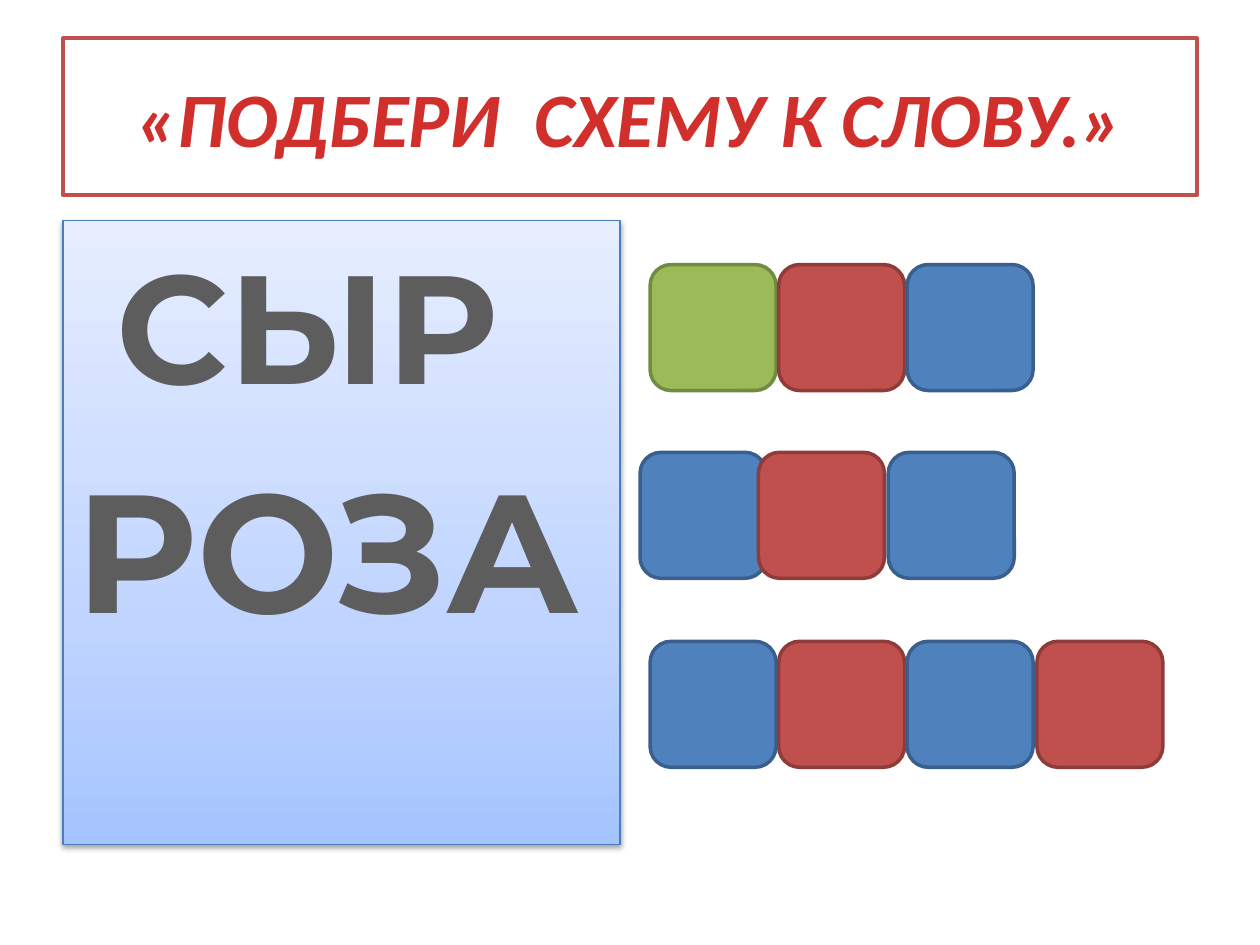
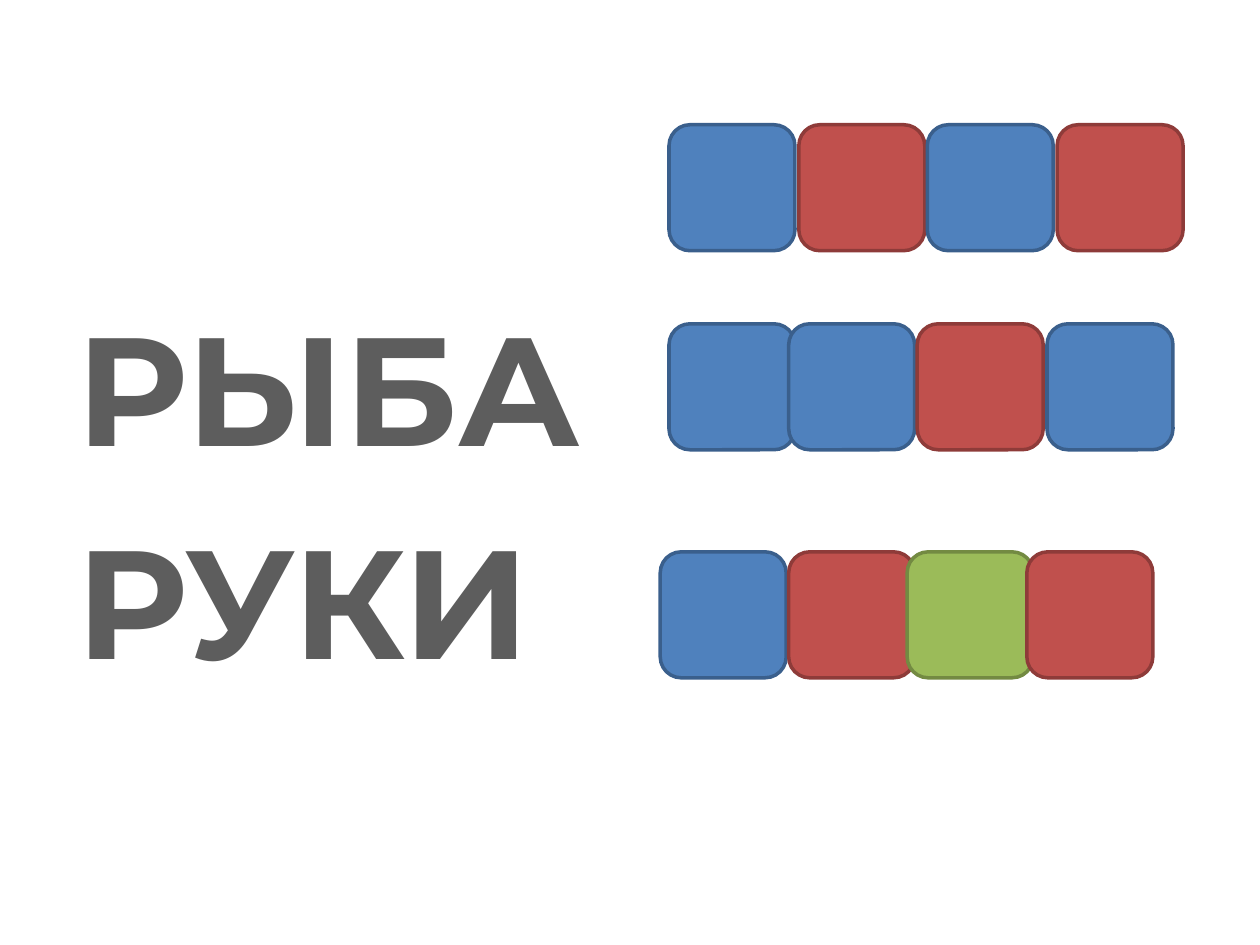
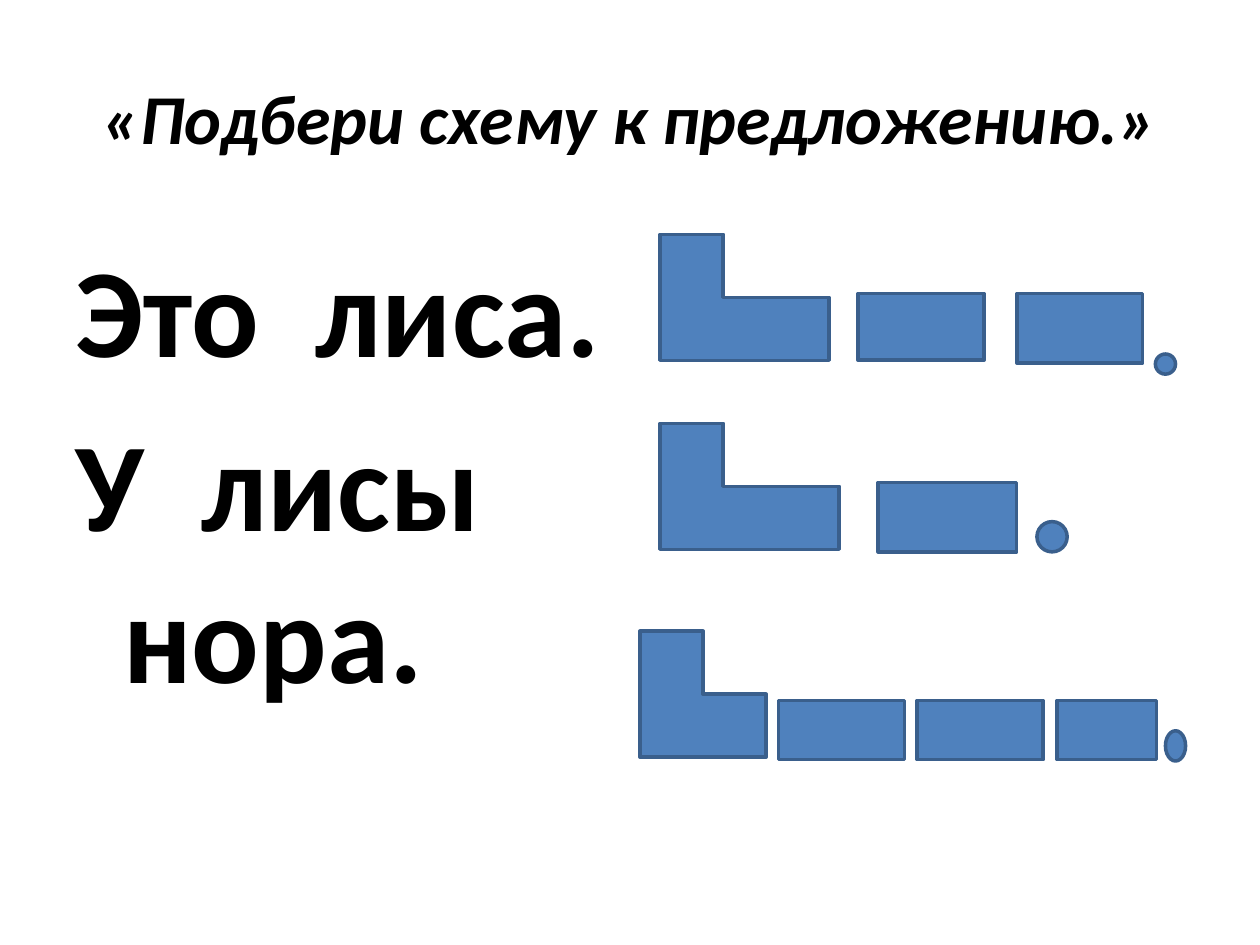
from copy import deepcopy

from lxml import etree
from pptx import Presentation
from pptx import util as u
from pptx.dml.color import RGBColor
from pptx.enum import shapes, text
from pptx.oxml import ns

PX = 9144  # 100 px to the inch

WHITE = RGBColor(0xFF, 0xFF, 0xFF)
BLACK = RGBColor(0x00, 0x00, 0x00)
GRAY = RGBColor(0x5D, 0x5D, 0x5D)
TITLE_RED = RGBColor(0xD0, 0x2F, 0x2C)
BLUE = RGBColor(0x4F, 0x81, 0xBD)
BLUE_EDGE = RGBColor(0x3A, 0x5F, 0x8C)
RED = RGBColor(0xC0, 0x50, 0x4D)
RED_EDGE = RGBColor(0x8E, 0x3B, 0x39)
GREEN = RGBColor(0x9B, 0xBB, 0x59)
GREEN_EDGE = RGBColor(0x73, 0x8A, 0x42)
PANEL_EDGE = RGBColor(0x4B, 0x7E, 0xBC)
PANEL_STOPS = [(0, RGBColor(0xA4, 0xC4, 0xFF)),
               (0.35, RGBColor(0xBF, 0xD4, 0xFF)),
               (1, RGBColor(0xE6, 0xEE, 0xFF))]

SOUNDS = {"blue": (BLUE, BLUE_EDGE), "red": (RED, RED_EDGE),
          "green": (GREEN, GREEN_EDGE)}
KIND = shapes.MSO_SHAPE
TITLE_AREA = (50, 30, 900, 125)
WORDS_AREA = (50, 175, 442, 495)
HANGING = 38


def draw_shape(page, kind, area, fill, edge, weight=2):
    shape = page.shapes.add_shape(kind, *[n * PX for n in area])
    shape.shadow.inherit = False
    shape.fill.solid()
    shape.fill.fore_color.rgb = fill
    shape.line.color.rgb = edge
    shape.line.width = u.Pt(weight)
    return shape


def write(box, lines, font_name, color, top=5, title=False):
    """Fill a box with bold lines, each given as (words, size, first indent)."""
    frame = box.text_frame
    frame.word_wrap = True
    frame.margin_top = top * PX
    frame.vertical_anchor = text.MSO_ANCHOR.MIDDLE if title else text.MSO_ANCHOR.TOP
    for i, (words, size, indent) in enumerate(lines):
        para = frame.add_paragraph() if i else frame.paragraphs[0]
        para.text = words
        para.alignment = text.PP_ALIGN.CENTER if title else text.PP_ALIGN.LEFT
        if not title:
            props = para._p.get_or_add_pPr()
            props.set("marL", str(HANGING * PX))
            props.set("indent", str((indent - HANGING) * PX))
        if i:
            para.space_before = u.Pt(round(size * 0.18))
        para.font.name = font_name
        para.font.size = u.Pt(size)
        para.font.bold = True
        para.font.italic = title
        para.font.color.rgb = color


deck = Presentation()
deck.slide_width, deck.slide_height = 1000 * PX, 750 * PX
word_page, more_words_page, sentence_page = [
    deck.slides.add_slide(deck.slide_layouts[6]) for _ in range(3)]

# Titles
title = draw_shape(word_page, KIND.RECTANGLE, TITLE_AREA, WHITE, RED)
write(title, [("«ПОДБЕРИ  СХЕМУ К СЛОВУ.»", 44, 0)], "Calibri", TITLE_RED, title=True)
title = sentence_page.shapes.add_textbox(*[n * PX for n in TITLE_AREA])
write(title, [("«Подбери схему к предложению.»", 40, 0)], "Calibri", BLACK, title=True)

# Word panel with a three-stop gradient and a soft shadow
panel = draw_shape(word_page, KIND.RECTANGLE, WORDS_AREA, WHITE, PANEL_EDGE, 0.75)
panel.fill.gradient()
panel.fill.gradient_angle = 90
stop_list = panel._element.spPr.find(".//" + ns.qn("a:gsLst"))
stop_list.append(deepcopy(stop_list[-1]))
for stop, (position, color) in zip(panel.fill.gradient_stops, PANEL_STOPS):
    stop.position = position
    stop.color.rgb = color
effects = panel._element.spPr.find(ns.qn("a:effectLst"))
shadow = etree.SubElement(effects, ns.qn("a:outerShdw"), blurRad="40000",
                          dist="20000", dir="5400000", rotWithShape="0")
shade = etree.SubElement(shadow, ns.qn("a:srgbClr"), val="000000")
etree.SubElement(shade, ns.qn("a:alpha"), val="38000")
write(panel, [("СЫР", 88, 33), ("РОЗА", 96, 0)], "Montserrat", GRAY, top=8)

# Words and sentences without a panel
words = more_words_page.shapes.add_textbox(51 * PX, 52 * PX, 442 * PX, 626 * PX)
write(words, [("РЫБА", 88, 0), ("РУКИ", 88, 0)], "Montserrat", GRAY, top=180)
sentences = sentence_page.shapes.add_textbox(*[n * PX for n in WORDS_AREA])
write(sentences, [("Это  лиса.", 72, 0), ("У  лисы нора.", 72, 0)],
      "Calibri", BLACK, top=9)

# Sound schemes: page, top, then the left edge and sound of each square
sound_rows = [
    (word_page, 210, [(516, "green"), (618, "red"), (720, "blue")]),
    (word_page, 359, [(508, "blue"), (602, "red"), (705, "blue")]),
    (word_page, 509, [(516, "blue"), (618, "red"), (720, "blue"), (823, "red")]),
    (more_words_page, 99, [(531, "blue"), (634, "red"), (736, "blue"), (839, "red")]),
    (more_words_page, 257, [(531, "blue"), (626, "blue"), (728, "red"), (831, "blue")]),
    (more_words_page, 438, [(524, "blue"), (626, "red"), (720, "green"), (815, "red")]),
]
for page, top, squares in sound_rows:
    for left, sound in squares:
        draw_shape(page, KIND.ROUNDED_RECTANGLE, (left, top, 100, 100), *SOUNDS[sound])

# Sentence schemes: first word, other words, full stop
sentence_rows = [
    ((524, 186, 134, 100), [(681, 233, 100, 53), (807, 233, 100, 55)],
     (917, 281, 16, 16)),
    ((524, 336, 142, 100), [(697, 383, 110, 55)], (823, 414, 24, 24)),
    ((508, 501, 100, 100),
     [(618, 556, 100, 47), (728, 556, 100, 47), (839, 556, 79, 47)],
     (925, 580, 16, 24)),
]
for first_word, other_words, full_stop in sentence_rows:
    draw_shape(sentence_page, KIND.CORNER, first_word, BLUE, BLUE_EDGE)
    for word in other_words:
        draw_shape(sentence_page, KIND.RECTANGLE, word, BLUE, BLUE_EDGE)
    draw_shape(sentence_page, KIND.FLOWCHART_CONNECTOR, full_stop, BLUE, BLUE_EDGE)

deck.save("out.pptx")
